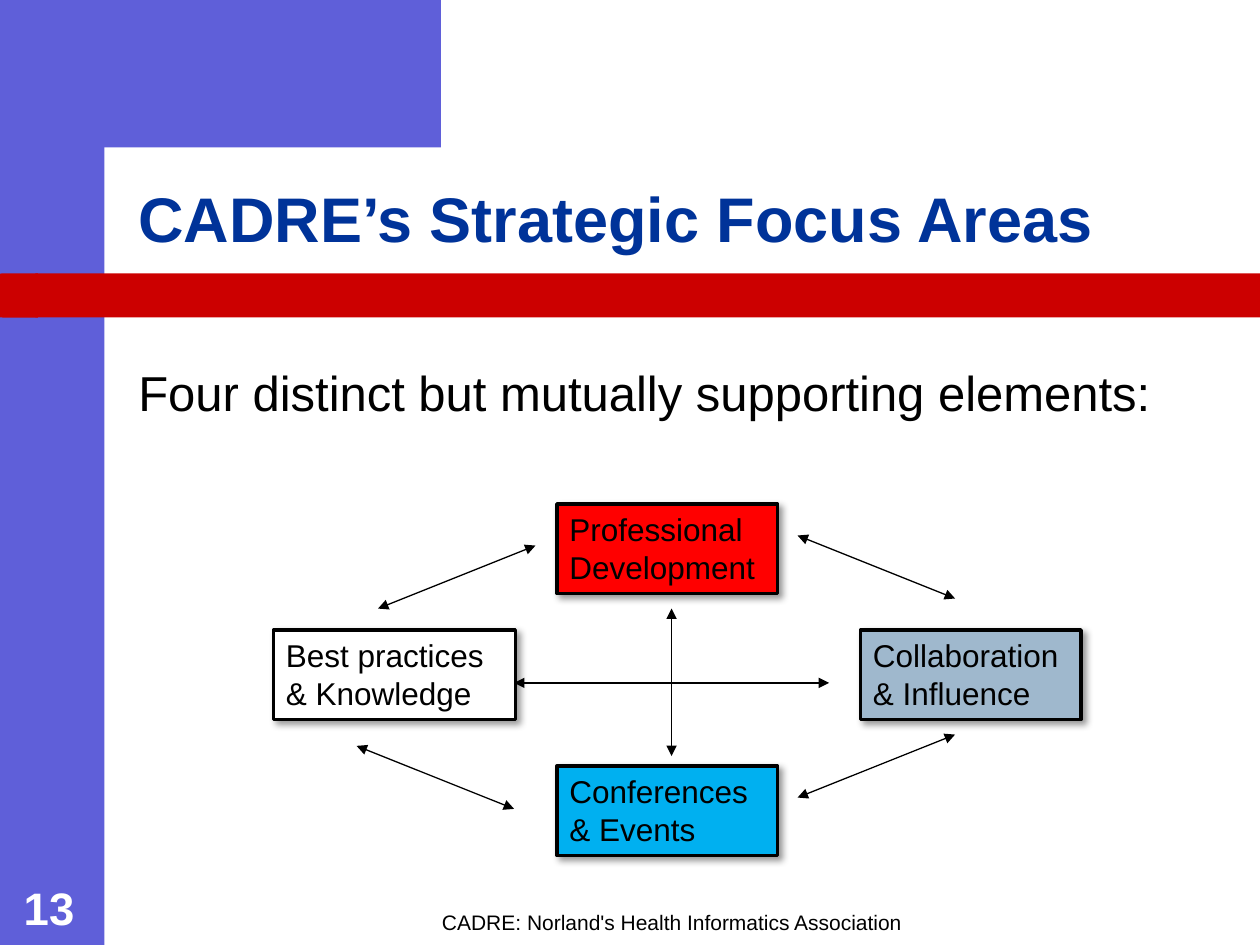
import lxml.etree
import pptx
import pptx.dml.color
import pptx.enum.shapes
import pptx.enum.text
import pptx.oxml
import pptx.oxml.ns
import pptx.util

Inches = pptx.util.Inches
Pt = pptx.util.Pt
RGBColor = pptx.dml.color.RGBColor
Shape = pptx.enum.shapes.MSO_SHAPE
Anchor = pptx.enum.text.MSO_ANCHOR
Align = pptx.enum.text.PP_ALIGN
qn = pptx.oxml.ns.qn

COLORS = {
    "violet": "5F5FD9", "band": "CC0000", "title": "003399",
    "black": "000000", "white": "FFFFFF",
    "red": "FF0000", "blue": "00B0F0", "steel": "9FB8CD",
}
SHADOW = (
    f'<a:effectLst {pptx.oxml.ns.nsdecls("a")}>'
    '<a:outerShdw blurRad="50800" dist="38100" dir="2700000" algn="tl" rotWithShape="0">'
    f'<a:srgbClr val="{COLORS["black"]}"><a:alpha val="40000"/></a:srgbClr>'
    '</a:outerShdw></a:effectLst>'
)


def add_block(kind, left, top, width, height, color):
    """Add a filled preset shape without outline or shadow."""
    shape = slide.shapes.add_shape(
        kind, Inches(left), Inches(top), Inches(width), Inches(height))
    shape.shadow.inherit = False
    shape.fill.solid()
    shape.fill.fore_color.rgb = RGBColor.from_string(COLORS[color])
    shape.line.fill.background()
    return shape


def write_text(shape, text, size, color="black", bold=False,
               anchor=Anchor.TOP, align=Align.LEFT):
    """Fill the shape with one wrapped paragraph and return the paragraph."""
    frame = shape.text_frame
    frame.word_wrap = True
    frame.vertical_anchor = anchor
    paragraph = frame.paragraphs[0]
    paragraph.alignment = align
    run = paragraph.add_run()
    run.text = text
    run.font.name = "Arial"
    run.font.size = Pt(size)
    run.font.bold = bold
    run.font.color.rgb = RGBColor.from_string(COLORS[color])
    return paragraph


presentation = pptx.Presentation()
presentation.slide_width = Inches(10)
presentation.slide_height = Inches(7.5)
slide = presentation.slides.add_slide(presentation.slide_layouts[6])

# Side column, top block and red band with its rounded end
add_block(Shape.RECTANGLE, 0, 0, 0.83, 7.5, "violet")
add_block(Shape.RECTANGLE, 0.75, 0, 2.75, 1.17, "violet")
add_block(Shape.RECTANGLE, 0.28, 2.17, 9.72, 0.35, "band")
band_end = add_block(Shape.FLOWCHART_DELAY, -0.25, 2.17, 0.55, 0.35, "band")
band_end.element.spPr.find(qn("a:xfrm")).set("flipH", "1")

# Title and lead sentence
title = slide.shapes.add_textbox(Inches(1), Inches(0.83), Inches(8.75), Inches(1.25))
paragraph = write_text(title, "CADRE’s Strategic Focus Areas", 36, "title",
                       bold=True, anchor=Anchor.BOTTOM)
paragraph.line_spacing = 0.9

lead = slide.shapes.add_textbox(Inches(1), Inches(2.83), Inches(8.75), Inches(1.08))
paragraph = write_text(lead, "Four distinct but mutually supporting elements:", 28)
paragraph.space_before = Pt(5.6)
properties = paragraph._p.get_or_add_pPr()
properties.set("marL", str(Inches(0.38)))
properties.set("indent", str(-Inches(0.38)))

# Four focus areas
focus_areas = [
    ("Best practices & Knowledge", 2.17, 5, 1.92, "white"),
    ("Professional Development", 4.42, 4, 1.75, "red"),
    ("Conferences & Events", 4.42, 6.08, 1.75, "blue"),
    ("Collaboration & Influence", 6.83, 5, 1.75, "steel"),
]
for text, left, top, width, color in focus_areas:
    box = add_block(Shape.RECTANGLE, left, top, width, 0.71, color)
    box.line.color.rgb = RGBColor.from_string(COLORS["black"])
    box.line.width = Pt(2)
    box_properties = box.element.spPr
    box_properties.remove(box_properties.find(qn("a:effectLst")))
    box_properties.append(pptx.oxml.parse_xml(SHADOW))
    write_text(box, text, 18)

# Double-headed arrows between the areas
arrows = [
    (3, 4.83, 4.25, 4.33),
    (6.33, 6.33, 7.58, 5.83),
    (7.58, 4.75, 6.33, 4.25),
    (4.08, 6.42, 2.83, 5.92),
    (5.33, 6, 5.33, 4.83),
    (6.58, 5.42, 4.08, 5.42),
]
for ends in arrows:
    arrow = slide.shapes.add_connector(
        pptx.enum.shapes.MSO_CONNECTOR.STRAIGHT, *[Inches(value) for value in ends])
    arrow.line.color.rgb = RGBColor.from_string(COLORS["black"])
    arrow.line.width = Pt(0.75)
    for tag in ("a:headEnd", "a:tailEnd"):
        lxml.etree.SubElement(arrow.line._get_or_add_ln(), qn(tag), type="triangle")
    lxml.etree.SubElement(arrow.element.spPr, qn("a:effectLst"))

# Page number and footer
number = slide.shapes.add_textbox(Inches(0.09), Inches(6.94), Inches(0.64), Inches(0.53))
write_text(number, "13", 26, "white", bold=True, anchor=Anchor.BOTTOM)
footer = slide.shapes.add_textbox(Inches(0.92), Inches(7.17), Inches(8.83), Inches(0.3))
write_text(footer, "CADRE: Norland's Health Informatics Association", 12,
           anchor=Anchor.BOTTOM, align=Align.CENTER)

presentation.save("out.pptx")
